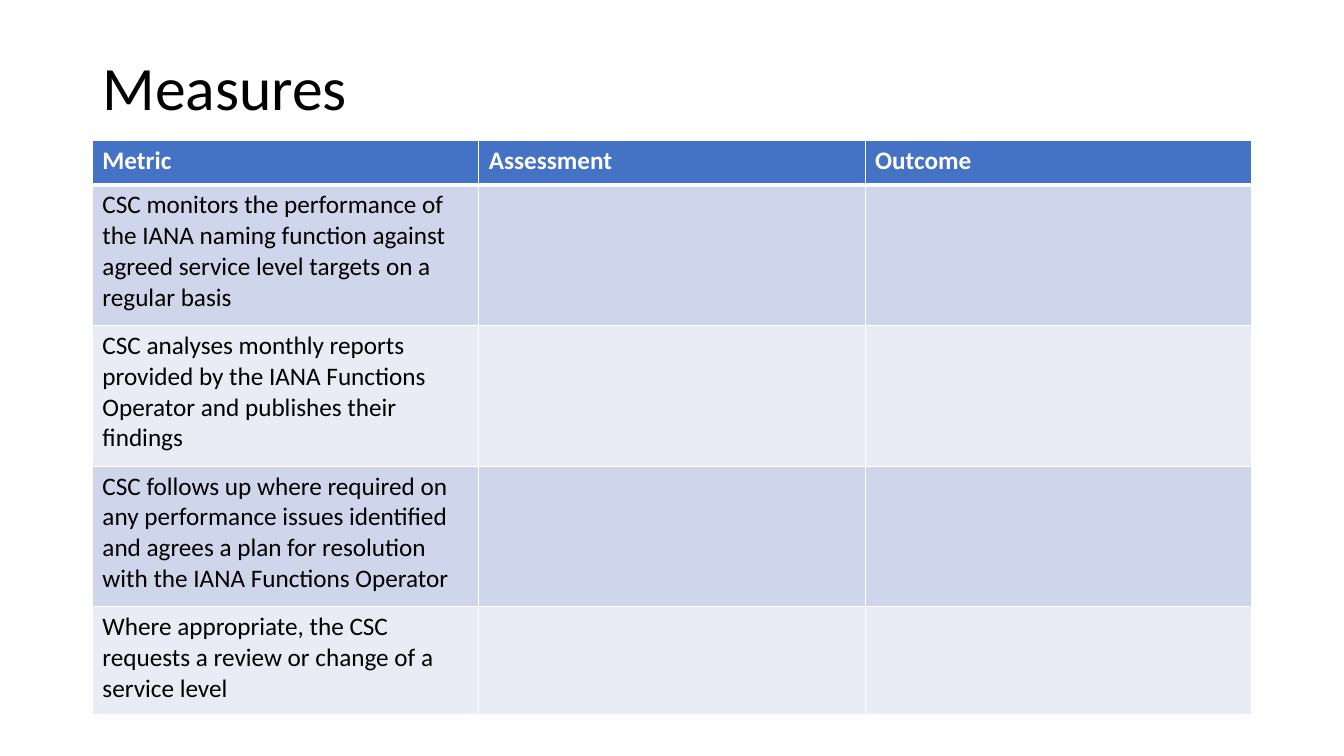
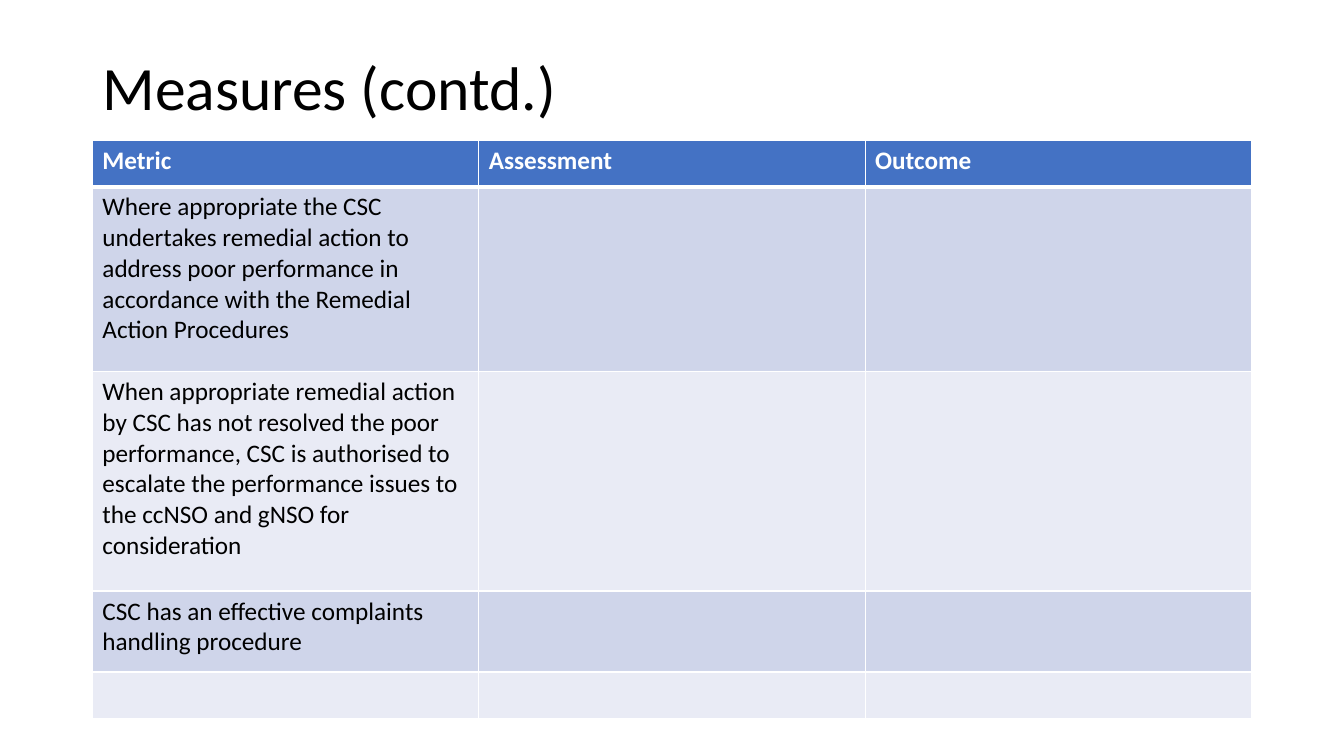
from lxml.etree import SubElement
from pptx import Presentation
from pptx.dml.color import RGBColor
from pptx.enum.text import MSO_ANCHOR, MSO_AUTO_SIZE, PP_ALIGN
from pptx.oxml.ns import qn
from pptx.util import Pt

EMU_PER_PX = 9525
FONT = "Calibri"
BLACK = "000000"
WHITE = "FFFFFF"
HEADER_FILL = "4472C4"
BAND_FILLS = ("CFD5EA", "E9EBF5")
TITLE_BOX = (88, 38, 1104, 96)
TABLE_BOX = (88, 134, 1104)
HEADINGS = ("Metric", "Assessment", "Outcome")
THIN, THICK = 1, 3

MEASURES = [
    ("Measures", 42, [
        ("CSC monitors the performance of the IANA naming function against "
         "agreed service level targets on a regular basis", 134),
        ("CSC analyses monthly reports provided by the IANA Functions "
         "Operator and publishes their findings", 134),
        ("CSC follows up where required on any performance issues identified "
         "and agrees a plan for resolution with the IANA Functions Operator", 134),
        ("Where appropriate, the CSC requests a review or change of a "
         "service level", 103),
    ]),
    ("Measures (contd.)", 44, [
        ("Where appropriate the CSC undertakes remedial action to address "
         "poor performance in accordance with the Remedial Action Procedures", 176),
        ("When appropriate remedial action by CSC has not resolved the poor "
         "performance, CSC is authorised to escalate the performance issues "
         "to the ccNSO and gNSO for consideration", 209),
        ("CSC has an effective complaints handling procedure", 77),
        ("", 44),
    ]),
]


def px(length):
    return length * EMU_PER_PX


def color(value):
    return RGBColor.from_string(value)


def add_run(paragraph, text, size, text_color, bold=False):
    run = paragraph.add_run()
    run.text = text
    run.font.name = FONT
    run.font.size = Pt(size)
    run.font.bold = bold
    run.font.color.rgb = color(text_color)


def set_borders(cell, top, bottom):
    properties = cell._tc.get_or_add_tcPr()
    widths = {"a:lnL": THIN, "a:lnR": THIN, "a:lnT": top, "a:lnB": bottom}
    for index, (tag, width) in enumerate(widths.items()):
        line = SubElement(properties, qn(tag), w=str(Pt(width)))
        fill = SubElement(line, qn("a:solidFill"))
        SubElement(fill, qn("a:srgbClr"), val=WHITE)
        properties.insert(index, line)


def place_title(slide, text, box):
    title = slide.shapes.title
    title.left, title.top, title.width, title.height = map(px, box)
    frame = title.text_frame
    frame.word_wrap = True
    frame.auto_size = MSO_AUTO_SIZE.NONE
    frame.vertical_anchor = MSO_ANCHOR.MIDDLE
    paragraph = frame.paragraphs[0]
    paragraph.alignment = PP_ALIGN.LEFT
    paragraph.line_spacing = 0.9
    add_run(paragraph, text, 44, BLACK)


def fill_cell(cell, text, row_index):
    is_header = row_index == 0
    cell.fill.solid()
    cell.fill.fore_color.rgb = color(
        HEADER_FILL if is_header else BAND_FILLS[(row_index - 1) % 2])
    set_borders(cell, THICK if row_index == 1 else THIN,
                THICK if is_header else THIN)
    if text:
        add_run(cell.text_frame.paragraphs[0], text, 18,
                WHITE if is_header else BLACK, is_header)


def place_table(slide, header_height, metrics, box):
    left, top, width = box
    heights = [header_height] + [height for _, height in metrics]
    rows = [HEADINGS] + [(metric, "", "") for metric, _ in metrics]
    table = slide.shapes.add_table(
        len(rows), len(HEADINGS), px(left), px(top), px(width), px(sum(heights))).table
    for column in table.columns:
        column.width = px(width // len(HEADINGS))
    for row_index, (height, texts) in enumerate(zip(heights, rows)):
        table.rows[row_index].height = px(height)
        for column_index, text in enumerate(texts):
            fill_cell(table.cell(row_index, column_index), text, row_index)


def add_measures_slide(presentation, title, header_height, metrics):
    slide = presentation.slides.add_slide(presentation.slide_layouts[5])
    place_title(slide, title, TITLE_BOX)
    place_table(slide, header_height, metrics, TABLE_BOX)


def main():
    presentation = Presentation()
    presentation.slide_width = px(1280)
    presentation.slide_height = px(720)
    for title, header_height, metrics in MEASURES:
        add_measures_slide(presentation, title, header_height, metrics)
    presentation.save("out.pptx")


if __name__ == "__main__":
    main()
